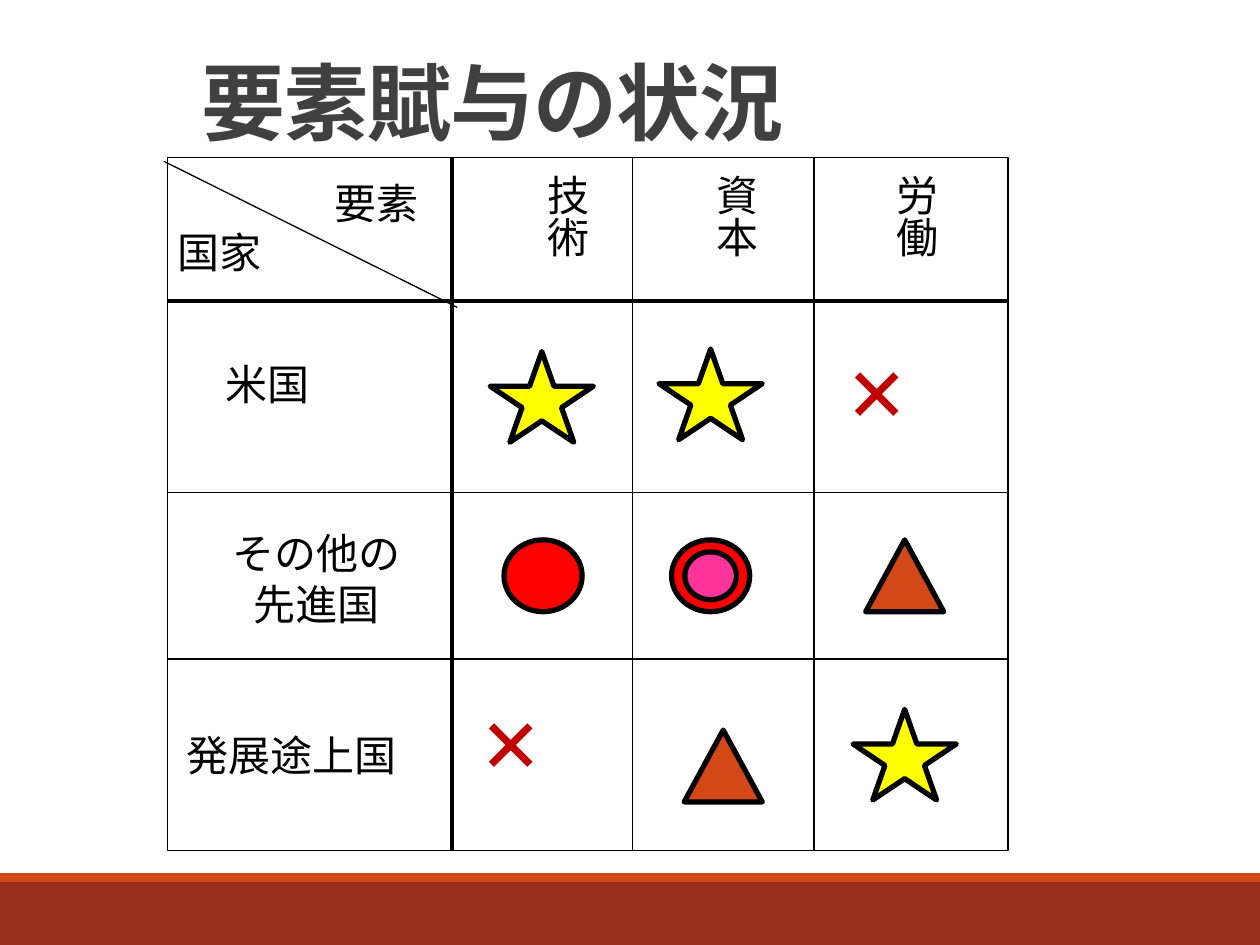
from lxml import etree
from pptx import Presentation, util as u
from pptx.dml.color import RGBColor
from pptx.enum import shapes, text
from pptx.oxml.ns import qn

BLACK = RGBColor(0x00, 0x00, 0x00)
GREY = RGBColor(0x40, 0x40, 0x40)
DARK_RED = RGBColor(0x9B, 0x2D, 0x1F)
ORANGE = RGBColor(0xD3, 0x48, 0x17)
YELLOW = RGBColor(0xFF, 0xFF, 0x00)
RED = RGBColor(0xFF, 0x00, 0x00)
PINK = RGBColor(0xFF, 0x33, 0x99)
CROSS_RED = RGBColor(0xC0, 0x00, 0x00)

# Grid edges in inches
COLS = [1.33, 3.59, 5.02, 6.46, 8]
ROWS = [1.25, 2.39, 3.91, 5.23, 6.75]

# Symbol kinds: preset, width, height, fill
KINDS = shapes.MSO_SHAPE
STAR = (KINDS.STAR_5_POINT, 0.82, 0.72, YELLOW)
CIRCLE = (KINDS.OVAL, 0.62, 0.57, RED)
INNER = (KINDS.OVAL, 0.41, 0.38, PINK)
TRIANGLE = (KINDS.FLOWCHART_EXTRACT, 0.62, 0.57, ORANGE)


def add_shape(s, kind, x, y, w, h, fill=None, line=None):
    sp = s.shapes.add_shape(kind, *map(u.Inches, (x, y, w, h)))
    sp.shadow.inherit = False
    if fill is None:
        sp.fill.background()
    else:
        sp.fill.solid()
        sp.fill.fore_color.rgb = fill
    if line is None:
        sp.line.fill.background()
    else:
        sp.line.color.rgb = BLACK
        sp.line.width = u.Pt(line)
    return sp


def add_symbol(s, symbol, cx, cy):
    kind, w, h, fill = symbol
    add_shape(s, kind, cx - w / 2, cy - h / 2, w, h, fill, line=3)


def add_line(s, x1, y1, x2, y2, width=0.75):
    c = s.shapes.add_connector(shapes.MSO_CONNECTOR.STRAIGHT,
                               *map(u.Inches, (x1, y1, x2, y2)))
    c.line.color.rgb = BLACK
    c.line.width = u.Pt(width)
    etree.SubElement(c._element.spPr, qn("a:effectLst"))


def add_text(s, words, x, y, w, h, size=24, font="Times New Roman", color=BLACK,
             bold=False, align=None, vertical=False):
    sp = s.shapes.add_textbox(*map(u.Inches, (x, y, w, h)))
    tf = sp.text_frame
    tf.word_wrap = False
    tf.auto_size = text.MSO_AUTO_SIZE.SHAPE_TO_FIT_TEXT
    if vertical:
        tf._txBody.bodyPr.set("vert", "eaVert")
    p = tf.paragraphs[0]
    p.text = words
    p.alignment = align
    for r in p.runs:
        r.font.size = u.Pt(size)
        r.font.name = font
        r.font.bold = bold
        r.font.color.rgb = color
    return sp


def add_title(s, words):
    sp = add_text(s, words, 1.5, 0, 8.5, 1.25, size=48, font="Calibri",
                  color=GREY, bold=True)
    tf = sp.text_frame
    tf.word_wrap = True
    tf.auto_size = text.MSO_AUTO_SIZE.NONE
    tf.vertical_anchor = text.MSO_ANCHOR.BOTTOM
    p = tf.paragraphs[0]
    p.line_spacing = 0.85
    p.runs[0].font._element.set("spc", "-50")


def add_grid(s):
    left, right, top, bottom = COLS[0], COLS[-1], ROWS[0], ROWS[-1]
    add_shape(s, KINDS.RECTANGLE, left, top, right - left, bottom - top, line=0.75)
    # The header row and column end in a heavy rule
    for i in range(1, 4):
        width = 2.25 if i == 1 else 0.75
        add_line(s, COLS[i], top, COLS[i], bottom, width)
        add_line(s, left, ROWS[i], right, ROWS[i], width)


def main():
    prs = Presentation()
    prs.slide_width, prs.slide_height = u.Inches(10), u.Inches(7.5)
    s = prs.slides.add_slide(prs.slide_layouts[6])

    # Footer bands and title
    add_shape(s, KINDS.RECTANGLE, 0, 7, 10, 0.5, DARK_RED)
    add_shape(s, KINDS.RECTANGLE, 0, 6.93, 10, 0.07, ORANGE)
    add_title(s, "要素賦与の状況")
    add_grid(s)

    # Row labels
    add_text(s, "米国", 1.69, 2.8, 1.07, 0.57)
    add_text(s, "その他の\v先進国", 1.58, 4.14, 1.87, 1.03,
             align=text.PP_ALIGN.CENTER)
    add_text(s, "発展途上国", 1.38, 5.74, 2.3, 0.57)

    # Column labels
    for words, x in (("技術", 4), ("資本", 5.34), ("労働", 6.77)):
        add_text(s, words, x, 1.29, 0.75, 0.88, vertical=True)

    # Ratings, placed by centre
    for symbol, cx, cy in (
        (STAR, 4.3, 3.15), (STAR, 5.64, 3.13),
        (CIRCLE, 4.31, 4.57), (CIRCLE, 5.64, 4.57), (INNER, 5.64, 4.57),
        (TRIANGLE, 7.18, 4.57),
        (TRIANGLE, 5.74, 6.08), (STAR, 7.18, 5.99),
    ):
        add_symbol(s, symbol, cx, cy)
    for x, y in ((6.63, 2.53), (3.72, 5.31)):
        add_text(s, "×", x, y, 1.05, 1.11, size=60, color=CROSS_RED, bold=True)

    # Split corner cell
    add_text(s, "要素", 2.56, 1.36, 1.07, 0.57)
    add_text(s, "国家", 1.31, 1.75, 1.07, 0.57)
    add_line(s, 1.3, 1.28, 3.63, 2.44)

    prs.save("out.pptx")


if __name__ == "__main__":
    main()
